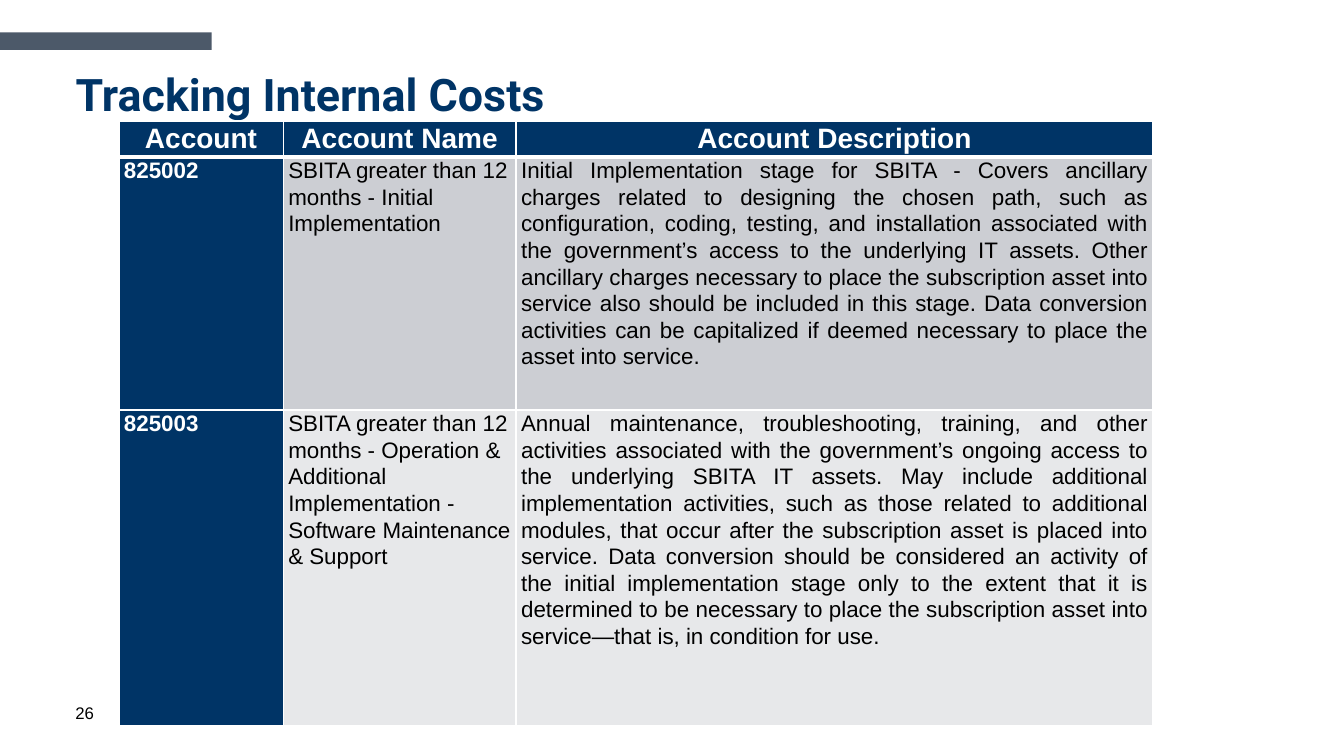
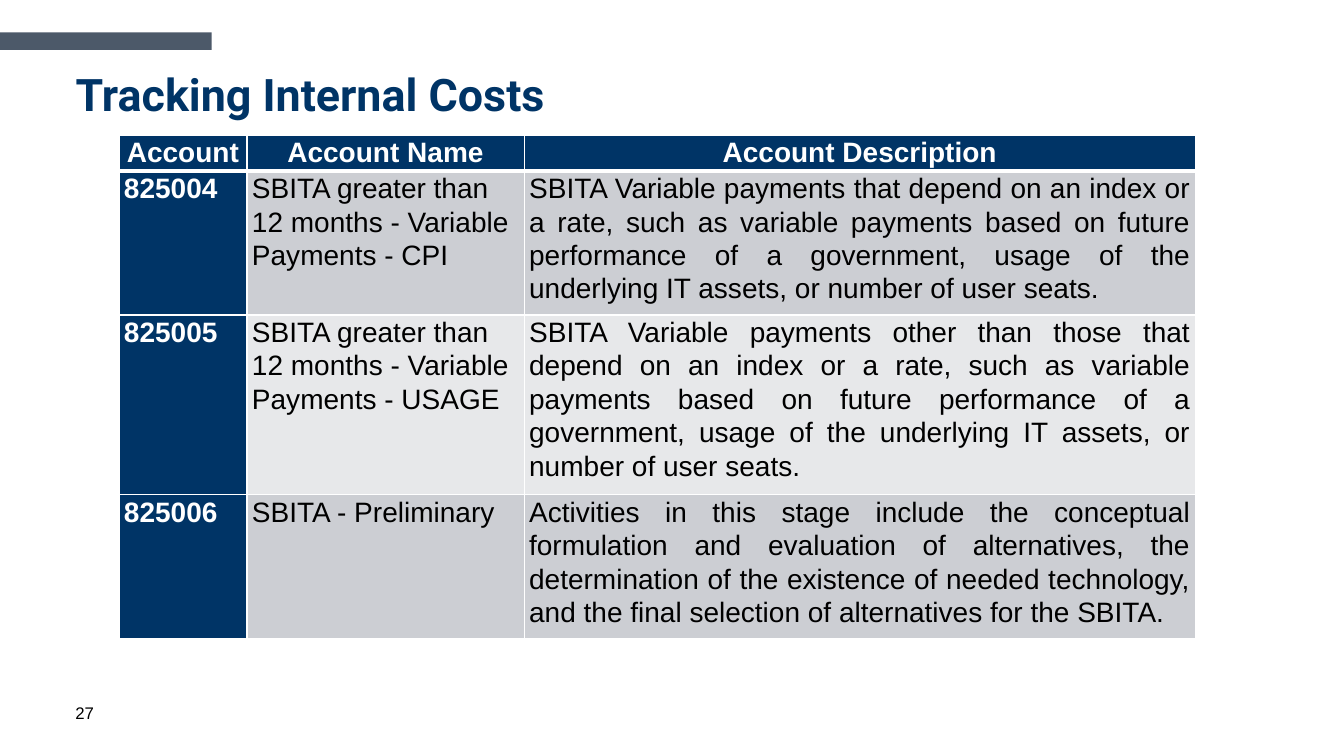
from dataclasses import dataclass
from typing import Any

from lxml.etree import SubElement
from pptx import Presentation
from pptx.dml.color import RGBColor
from pptx.enum.shapes import MSO_SHAPE
from pptx.enum.text import MSO_ANCHOR, MSO_AUTO_SIZE, PP_ALIGN
from pptx.oxml.ns import qn
from pptx.util import Emu, Inches, Pt

GRID_COLUMNS = 160
GRID_ROWS = 90
GRID_UNIT = 76200
NAVY = "003466"
SLATE = "4C5969"
WHITE = "FFFFFF"
BLACK = "000000"
BAND_FILLS = ("CCCED3", "E7E8EA")
HEADERS = ("Account", "Account Name", "Account Description")
TITLE = "Tracking Internal Costs"
TITLE_FONT = {"name": "Roboto", "size": Pt(32), "bold": True}
NUMBER_FONT = {"name": "Arial", "size": Pt(12)}
HEADER_FONT = {"name": "Arial", "size": Pt(20), "bold": True}
CELL_FRAME = {
    "margin_left": Inches(0.05),
    "margin_right": Inches(0.05),
    "margin_top": 0,
    "margin_bottom": 0,
    "vertical_anchor": MSO_ANCHOR.TOP,
}


@dataclass(frozen=True)
class Area:
    column: float
    row: float
    columns: float
    rows: float

    def lengths(self) -> tuple[Emu, ...]:
        return tuple(map(grid, (self.column, self.row, self.columns, self.rows)))


@dataclass(frozen=True)
class Account:
    number: str
    name: str
    description: str


@dataclass(frozen=True)
class AccountSlide:
    page: int
    top: float
    column_widths: tuple[float, ...]
    row_heights: tuple[float, ...]
    body_size: int
    accounts: tuple[Account, ...]


BAR_AREA = Area(0, 3.84, 25.2, 2.1)
TITLE_AREA = Area(7.8, 8.04, 144.24, 10.2)
NUMBER_AREA = Area(7.8, 83.04, 33.6, 3.6)
TABLE_LEFT = 14.16

ACCOUNT_SLIDES = (
    AccountSlide(26, 14.4, (19.56, 27.72, 75.84), (3.96, 30.12, 37.56), 16, (
        Account(
            "825002",
            "SBITA greater than 12 months - Initial Implementation",
            "Initial Implementation stage for SBITA - Covers ancillary charges related to "
            "designing the chosen path, such as configuration, coding, testing, and "
            "installation associated with the government’s access to the underlying IT "
            "assets. Other ancillary charges necessary to place the subscription asset into "
            "service also should be included in this stage. Data conversion activities can "
            "be capitalized if deemed necessary to place the asset into service.",
        ),
        Account(
            "825003",
            "SBITA greater than 12 months - Operation & Additional Implementation - "
            "Software Maintenance & Support",
            "Annual maintenance, troubleshooting, training, and other activities associated "
            "with the government’s ongoing access to the underlying SBITA IT assets. May "
            "include additional implementation activities, such as those related to "
            "additional modules, that occur after the subscription asset is placed into "
            "service. Data conversion should be considered an activity of the initial "
            "implementation stage only to the extent that it is determined to be necessary "
            "to place the subscription asset into service—that is, in condition for use.",
        ),
    )),
    AccountSlide(27, 16.08, (15.24, 33, 79.92), (3.96, 15.96, 19.92, 15.96), 20, (
        Account(
            "825004",
            "SBITA greater than 12 months - Variable Payments - CPI",
            "SBITA Variable payments that depend on an index or a rate, such as variable "
            "payments based on future performance of a government, usage of the underlying "
            "IT assets, or number of user seats.",
        ),
        Account(
            "825005",
            "SBITA greater than 12 months - Variable Payments - USAGE",
            "SBITA Variable payments other than those that depend on an index or a rate, "
            "such as variable payments based on future performance of a government, usage "
            "of the underlying IT assets, or number of user seats.",
        ),
        Account(
            "825006",
            "SBITA - Preliminary",
            "Activities in this stage include the conceptual formulation and evaluation of "
            "alternatives, the determination of the existence of needed technology, and the "
            "final selection of alternatives for the SBITA.",
        ),
    )),
)


def grid(units: float) -> Emu:
    return Emu(round(units * GRID_UNIT))


def color(value: str) -> RGBColor:
    return RGBColor.from_string(value)


def apply(target: Any, values: dict[str, Any]) -> None:
    for name, value in values.items():
        setattr(target, name, value)


def fill(target: Any, value: str) -> None:
    target.fill.solid()
    target.fill.fore_color.rgb = color(value)


def write(frame: Any, text: str, font: dict[str, Any], text_color: str,
          alignment: PP_ALIGN = PP_ALIGN.LEFT, line_spacing: float = 1.0) -> None:
    frame.word_wrap = True
    paragraph = frame.paragraphs[0]
    run = paragraph.add_run()
    run.text = text
    apply(paragraph, {"alignment": alignment, "line_spacing": line_spacing})
    apply(run.font, font)
    run.font.color.rgb = color(text_color)


def add_borders(cell: Any, widths: dict[str, float]) -> None:
    properties = cell._tc.get_or_add_tcPr()
    for side, width in widths.items():
        line = SubElement(properties, qn(f"a:ln{side}"), w=str(Pt(width)))
        line_fill = SubElement(line, qn("a:solidFill"))
        SubElement(line_fill, qn("a:srgbClr"), val=WHITE)


def add_frame(slide: Any, page: int) -> None:
    bar = slide.shapes.add_shape(MSO_SHAPE.RECTANGLE, *BAR_AREA.lengths())
    bar.shadow.inherit = False
    fill(bar, SLATE)
    bar.line.fill.background()

    number = slide.shapes.add_textbox(*NUMBER_AREA.lengths())
    write(number.text_frame, str(page), NUMBER_FONT, BLACK)

    title = slide.shapes.title
    apply(title, dict(zip(("left", "top", "width", "height"), TITLE_AREA.lengths())))
    apply(title.text_frame, {"vertical_anchor": MSO_ANCHOR.TOP, "auto_size": MSO_AUTO_SIZE.NONE})
    write(title.text_frame, TITLE, TITLE_FONT, NAVY, line_spacing=0.9)


def add_account_table(slide: Any, content: AccountSlide) -> None:
    area = Area(TABLE_LEFT, content.top, sum(content.column_widths), sum(content.row_heights))
    table = slide.shapes.add_table(
        len(content.row_heights), len(content.column_widths), *area.lengths()
    ).table
    apply(table, {"first_col": True, "horz_banding": False})
    for column, width in zip(table.columns, content.column_widths):
        column.width = grid(width)
    for row, height in zip(table.rows, content.row_heights):
        row.height = grid(height)

    texts = [HEADERS] + [(item.number, item.name, item.description) for item in content.accounts]
    for row_index, row_texts in enumerate(texts):
        is_header = row_index == 0
        for column_index, text in enumerate(row_texts):
            is_navy = is_header or column_index == 0
            alignment = PP_ALIGN.JUSTIFY if column_index == 2 else PP_ALIGN.LEFT
            font = HEADER_FONT if is_header else {
                "name": "Arial", "size": Pt(content.body_size), "bold": is_navy
            }
            cell = table.cell(row_index, column_index)
            apply(cell, CELL_FRAME)
            add_borders(cell, {
                "L": 1, "R": 1,
                "T": 3 if row_index == 1 else 1,
                "B": 3 if is_header else 1,
            })
            fill(cell, NAVY if is_navy else BAND_FILLS[(row_index - 1) % 2])
            write(cell.text_frame, text, font, WHITE if is_navy else BLACK,
                  PP_ALIGN.CENTER if is_header else alignment, 1.07)


def main() -> None:
    presentation = Presentation()
    presentation.slide_width = grid(GRID_COLUMNS)
    presentation.slide_height = grid(GRID_ROWS)
    title_only = presentation.slide_layouts.get_by_name("Title Only")
    for content in ACCOUNT_SLIDES:
        slide = presentation.slides.add_slide(title_only)
        add_frame(slide, content.page)
        add_account_table(slide, content)
    presentation.save("out.pptx")


if __name__ == "__main__":
    main()
